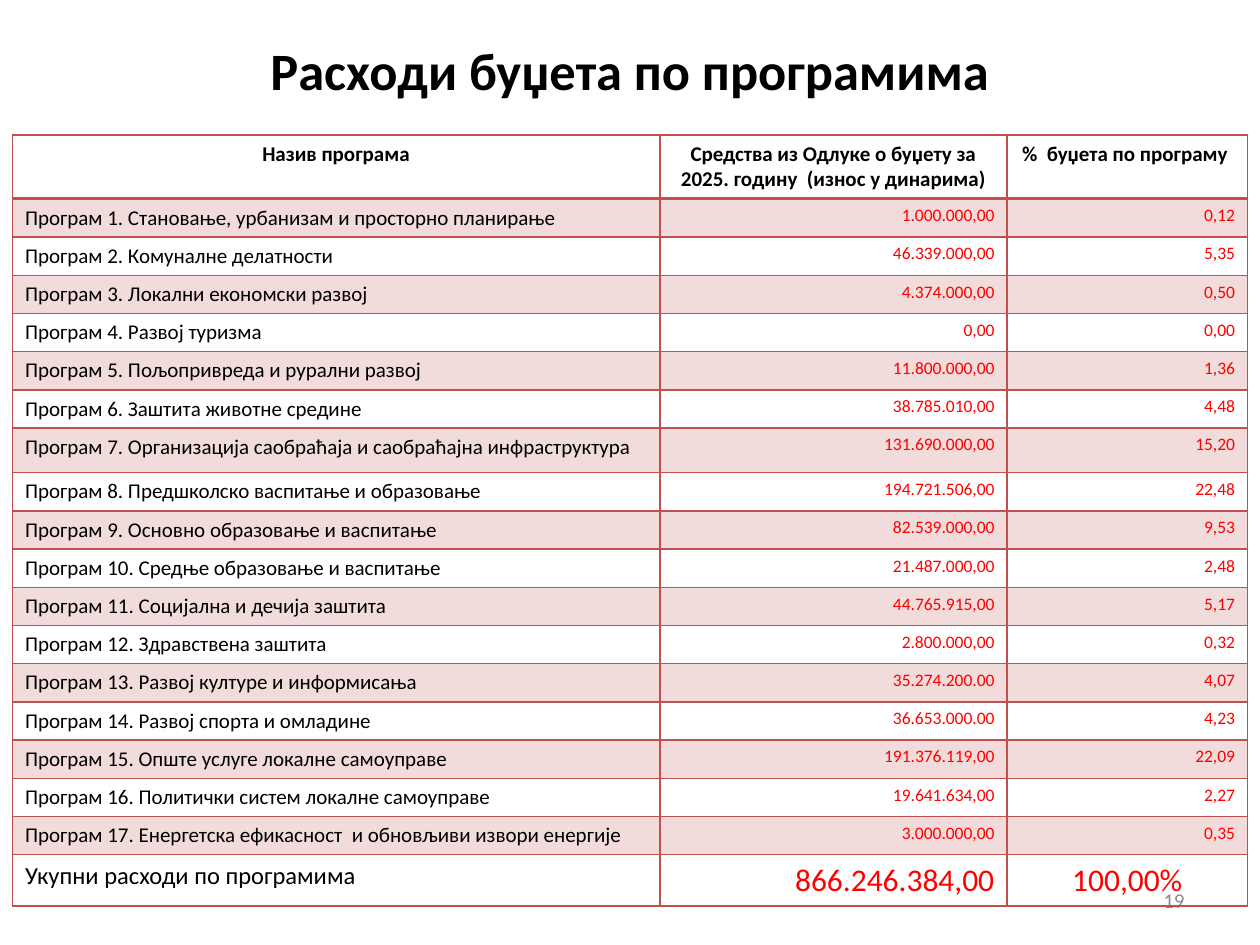
from dataclasses import dataclass

from lxml.etree import SubElement
from pptx import Presentation
from pptx.dml.color import RGBColor
from pptx.enum.text import MSO_ANCHOR, PP_ALIGN
from pptx.oxml.ns import qn
from pptx.util import Cm, Pt


@dataclass(frozen=True)
class Theme:
    font: str = "Calibri"
    black: str = "000000"
    red: str = "FF0000"
    grey: str = "8C8C8C"
    accent: str = "C0504D"
    band_alpha: int = 20
    title: int = 30
    body: int = 12
    value: int = 10
    total_label: int = 14
    total_value: int = 18
    line: int = 1
    header_line: int = 2


THEME = Theme()
LEFT, CENTER, RIGHT = PP_ALIGN.LEFT, PP_ALIGN.CENTER, PP_ALIGN.RIGHT

HEADER = [
    "Назив програма",
    "Средства из Одлуке о буџету за 2025. годину  (износ у динарима)",
    "%  буџета по програму ",
]
PROGRAMS = [
    ("Становање, урбанизам и просторно планирање", "1.000.000,00", "0,12"),
    ("Комуналне делатности", "46.339.000,00", "5,35"),
    ("Локални економски развој", "4.374.000,00", "0,50"),
    ("Развој туризма", "0,00", "0,00"),
    ("Пољопривреда и рурални развој", "11.800.000,00", "1,36"),
    ("Заштита животне средине", "38.785.010,00", "4,48"),
    ("Организација саобраћаја и саобраћајна инфраструктура", "131.690.000,00", "15,20"),
    ("Предшколско васпитање и образовање", "194.721.506,00", "22,48"),
    ("Основно образовање и васпитање", "82.539.000,00", "9,53"),
    ("Средње образовање и васпитање", "21.487.000,00", "2,48"),
    ("Социјална и дечија заштита", "44.765.915,00", "5,17"),
    ("Здравствена заштита", "2.800.000,00", "0,32"),
    ("Развој културе и информисања", "35.274.200.00", "4,07"),
    ("Развој спорта и омладине", "36.653.000.00", "4,23"),
    ("Опште услуге локалне самоуправе", "191.376.119,00", "22,09"),
    ("Политички систем локалне самоуправе", "19.641.634,00", "2,27"),
    ("Енергетска ефикасност  и обновљиви извори енергије", "3.000.000,00", "0,35"),
]
TOTAL = ["Укупни расходи по програмима", "866.246.384,00", "100,00%"]

COL_WIDTHS = [13.05, 7, 4.85]
HEADER_HEIGHT, ROW_HEIGHT, TALL_ROW_HEIGHT, TOTAL_HEIGHT = 1.29, 0.77, 0.9, 1.03
TALL_PROGRAM = 7


def write(tf, text, size, color, align, bold=False):
    p = tf.paragraphs[0]
    p.text = text
    p.alignment = align
    p.font.name = THEME.font
    p.font.size = Pt(size)
    p.font.bold = bold
    p.font.color.rgb = RGBColor.from_string(color)


def add_text(s, box, *style, **options):
    tf = s.shapes.add_textbox(*map(Cm, box)).text_frame
    tf.word_wrap = True
    tf.vertical_anchor = MSO_ANCHOR.MIDDLE
    write(tf, *style, **options)


def set_borders(cell, top, bottom):
    tc_pr = cell._tc.get_or_add_tcPr()
    widths = {"lnL": THEME.line, "lnR": THEME.line, "lnT": top, "lnB": bottom}
    for side, width in widths.items():
        ln = SubElement(tc_pr, qn(f"a:{side}"), w=str(Pt(width)))
        fill = SubElement(ln, qn("a:solidFill"))
        SubElement(fill, qn("a:srgbClr"), val=THEME.accent)


def set_fill(cell, banded):
    if not banded:
        cell.fill.background()
        return
    cell.fill.solid()
    cell.fill.fore_color.rgb = RGBColor.from_string(THEME.accent)
    color = cell._tc.tcPr.find(".//" + qn("a:solidFill") + "/" + qn("a:srgbClr"))
    # The borders hold solid fills too, so take the cell's own
    color = cell._tc.tcPr.find(qn("a:solidFill")).find(qn("a:srgbClr"))
    SubElement(color, qn("a:alpha"), val=str(THEME.band_alpha * 1000))


def fill_row(table, i, texts, styles, bold=False):
    for cell, text, style in zip(table.rows[i].cells, texts, styles):
        write(cell.text_frame, text, *style, bold=bold)
        set_borders(cell,
                    top=THEME.header_line if i == 1 else THEME.line,
                    bottom=THEME.header_line if i == 0 else THEME.line)
        set_fill(cell, banded=i % 2 == 1 and i <= len(PROGRAMS))


def add_budget_table(s):
    heights = [HEADER_HEIGHT] + [ROW_HEIGHT] * len(PROGRAMS) + [TOTAL_HEIGHT]
    heights[TALL_PROGRAM] = TALL_ROW_HEIGHT
    table = s.shapes.add_table(
        len(heights), len(COL_WIDTHS), Cm(0.25), Cm(2.72),
        Cm(sum(COL_WIDTHS)), Cm(sum(heights))).table
    table.first_row = table.horz_banding = False
    for column, width in zip(table.columns, COL_WIDTHS):
        column.width = Cm(width)
    for row, height in zip(table.rows, heights):
        row.height = Cm(height)

    # Header
    fill_row(table, 0, HEADER, [(THEME.body, THEME.black, CENTER)] * 3, bold=True)

    # Programs
    value = (THEME.value, THEME.red, RIGHT)
    for i, (name, amount, share) in enumerate(PROGRAMS, start=1):
        fill_row(table, i, [f"Програм {i}. {name}", amount, share],
                 [(THEME.body, THEME.black, LEFT), value, value])

    # Total
    fill_row(table, len(heights) - 1, TOTAL,
             [(THEME.total_label, THEME.black, LEFT),
              (THEME.total_value, THEME.red, RIGHT),
              (THEME.total_value, THEME.red, CENTER)])


def main():
    prs = Presentation()
    prs.slide_width, prs.slide_height = Cm(25.4), Cm(19.05)
    s = prs.slides.add_slide(prs.slide_layouts[6])

    # Title and page number
    add_text(s, (1.88, 0.33, 21.64, 2.16), "Расходи буџета по програмима",
             THEME.title, THEME.black, CENTER, bold=True)
    add_text(s, (18.2, 17.65, 5.93, 1.01), "19", THEME.body, THEME.grey, RIGHT)

    add_budget_table(s)
    prs.save("out.pptx")


if __name__ == "__main__":
    main()
